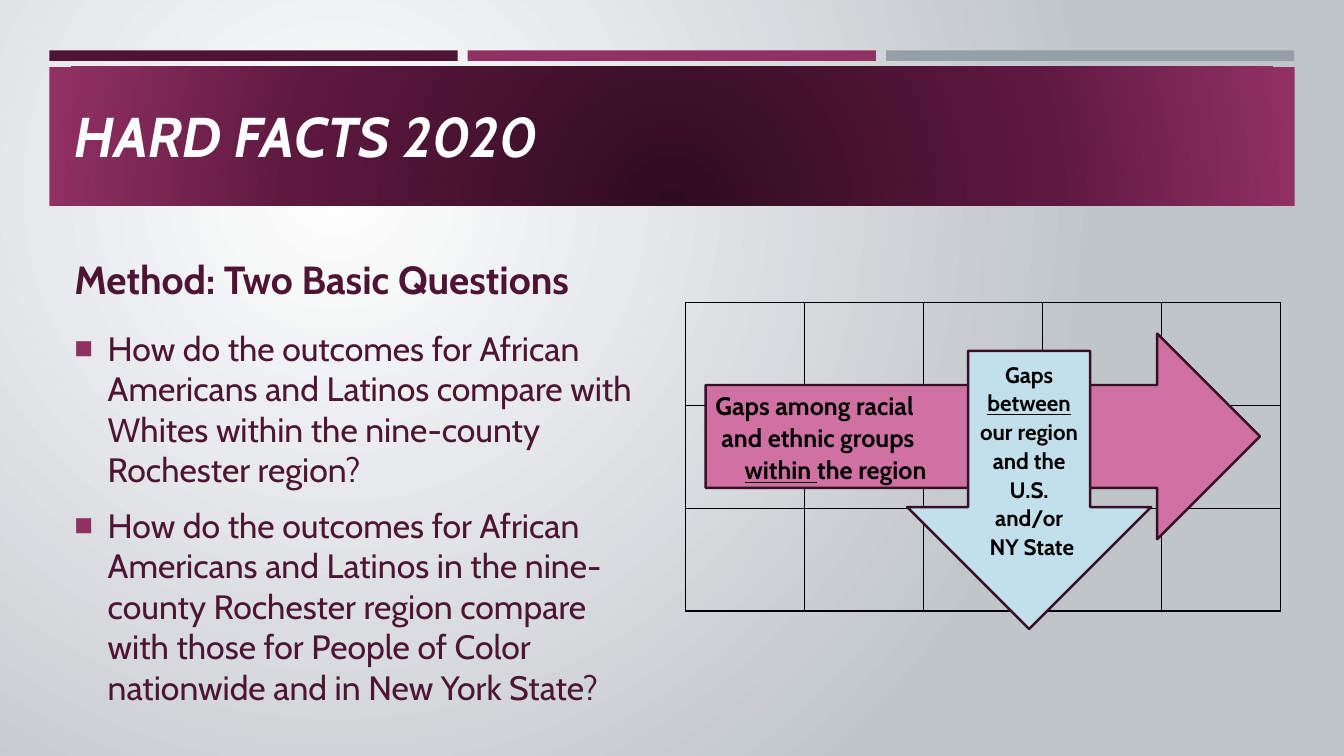
from lxml import etree
from pptx import Presentation
from pptx.dml.color import RGBColor
from pptx.enum.shapes import MSO_SHAPE as Preset
from pptx.enum.text import MSO_ANCHOR as Anchor, PP_ALIGN as Align
from pptx.oxml import parse_xml
from pptx.oxml.ns import nsdecls, qn
from pptx.util import Pt

PLUM = RGBColor(0x4D, 0x14, 0x34)
MAGENTA = RGBColor(0x90, 0x31, 0x63)
SLATE = RGBColor(0x96, 0x9F, 0xA7)
PINK = RGBColor(0xCF, 0x71, 0xA2)
ICE = RGBColor(0xC2, 0xE0, 0xEB)
OUTLINE = RGBColor(0x39, 0x0F, 0x26)
WHITE = RGBColor(0xFF, 0xFF, 0xFF)
BLACK = RGBColor(0, 0, 0)
FONT = "Cabin"

BACKDROP_STOPS = [(0, "FFFFFF"), (100, "C0C5CA")]
BAND_STOPS = [(0, "2E0C1F"), (60, "5D183F"), (100, "903163")]
TITLE = "HARD FACTS 2020"
METHOD = "Method: Two Basic Questions"
QUESTIONS = [
    "How do the outcomes for African Americans and Latinos compare with "
    "Whites within the nine-county Rochester region?",
    "How do the outcomes for African Americans and Latinos in the nine-county "
    "Rochester region compare with those for People of Color nationwide and in "
    "New York State?",
]
WITHIN = [
    (0, [("Gaps among racial", False)]),
    (4.2, [("and ethnic groups", False)]),
    (20.8, [("within ", True), ("the region", False)]),
]
BETWEEN = [
    (0, [("Gaps", False)]),
    (0, [("between", True)]),
    (0, [("our region", False)]),
    (0, [("and the U.S. and/or", False)]),
    (4, [("NY State", False)]),
]
BARS = [PLUM, MAGENTA, SLATE]
BAR_LEFT, BAR_STEP, BAR_WIDTH = 35.3, 298.8, 291.6
GRID_ROWS, GRID_COLUMNS = 3, 5
GRID_BOX = (489.6, 216, 424.8, 220.5)
TEXT_LEFT, TEXT_WIDTH = 46.1, 424.8


def points(box):
    return [Pt(value) for value in box]


def radial(solid, stops, focus):
    stop_xml = "".join(
        f'<a:gs pos="{pos * 1000}"><a:srgbClr val="{color}"/></a:gs>'
        for pos, color in stops)
    edges = " ".join(
        f'{side}="{value * 1000}"' for side, value in zip("ltrb", focus))
    gradient = parse_xml(
        f'<a:gradFill {nsdecls("a")} rotWithShape="1"><a:gsLst>{stop_xml}</a:gsLst>'
        f'<a:path path="circle"><a:fillToRect {edges}/></a:path></a:gradFill>')
    solid.getparent().replace(solid, gradient)


def style(font, size, color, bold=False, italic=False):
    font.name, font.size, font.bold, font.italic = FONT, Pt(size), bold, italic
    font.color.rgb = color


def add_block(preset, box, color):
    block = slide.shapes.add_shape(preset, *points(box))
    block.shadow.inherit = False
    block.fill.solid()
    block.fill.fore_color.rgb = color
    block.line.fill.background()
    return block


def add_words(box, lines, anchor, size, color, bold=False, italic=False):
    frame = slide.shapes.add_textbox(*points(box)).text_frame
    frame.word_wrap = True
    frame.vertical_anchor = anchor
    frame.text = "\n".join(lines)
    for paragraph in frame.paragraphs:
        for run in paragraph.runs:
            style(run.font, size, color, bold, italic)
    return frame


def add_bullet(paragraph):
    properties = paragraph._p.get_or_add_pPr()
    properties.set("marL", str(Pt(23.8)))
    properties.set("indent", str(Pt(-23.8)))
    color = etree.SubElement(properties, qn("a:buClr"))
    etree.SubElement(color, qn("a:srgbClr"), val=str(MAGENTA))
    etree.SubElement(properties, qn("a:buSzPct"), val="92000")
    etree.SubElement(properties, qn("a:buFont"), typeface="Arial")
    etree.SubElement(properties, qn("a:buChar"), char="■")


def add_arrow(preset, box, color, lines, size, align):
    arrow = add_block(preset, box, color)
    arrow.line.color.rgb = OUTLINE
    arrow.line.width = Pt(1.75)
    frame = arrow.text_frame
    frame.word_wrap = True
    frame.vertical_anchor = Anchor.MIDDLE
    for index, (indent, pieces) in enumerate(lines):
        paragraph = frame.add_paragraph() if index else frame.paragraphs[0]
        paragraph.alignment = align
        paragraph.line_spacing = 1.07
        paragraph._p.get_or_add_pPr().set("marL", str(Pt(indent)))
        for words, underlined in pieces:
            run = paragraph.add_run()
            run.text = words
            style(run.font, size, BLACK, bold=True)
            run.font.underline = underlined


def add_grid():
    left, top, width, height = GRID_BOX
    grid = slide.shapes.add_table(
        GRID_ROWS, GRID_COLUMNS, *points(GRID_BOX)).table
    grid.first_row = grid.horz_banding = False
    for column in grid.columns:
        column.width = Pt(width / GRID_COLUMNS)
    for row in grid.rows:
        row.height = Pt(height / GRID_ROWS)
    for cell in grid.iter_cells():
        properties = cell._tc.get_or_add_tcPr()
        for side in ("lnL", "lnR", "lnT", "lnB"):
            properties.append(parse_xml(
                f'<a:{side} {nsdecls("a")} w="{Pt(1)}"><a:solidFill>'
                f'<a:srgbClr val="{BLACK}"/></a:solidFill></a:{side}>'))
        cell.fill.background()


deck = Presentation()
deck.slide_width, deck.slide_height = Pt(960), Pt(540)
slide = deck.slides.add_slide(deck.slide_layouts[6])

slide.background.fill.solid()
radial(slide.element.find(".//" + qn("a:solidFill")),
       BACKDROP_STOPS, (50, 50, 100, 100))

for index, color in enumerate(BARS):
    add_block(Preset.RECTANGLE,
              (BAR_LEFT + index * BAR_STEP, 36, BAR_WIDTH, 7.5), color)
band = add_block(Preset.RECTANGLE, (BAR_LEFT, 47.6, 889.5, 99.5), PLUM)
radial(band._element.spPr.find(qn("a:solidFill")),
       BAND_STOPS, (50, 130, 50, -30))

add_words((TEXT_LEFT, 57.6, 868.3, 77.8), [TITLE], Anchor.MIDDLE,
          40, WHITE, bold=True, italic=True)
method = add_words((TEXT_LEFT, 177.1, TEXT_WIDTH, 42.5), [METHOD],
                   Anchor.BOTTOM, 28, PLUM, bold=True)
method.paragraphs[0].space_after = Pt(6)
questions = add_words((TEXT_LEFT, 230.4, TEXT_WIDTH, 269.3), QUESTIONS,
                      Anchor.TOP, 24.1, PLUM)
for index, paragraph in enumerate(questions.paragraphs):
    add_bullet(paragraph)
    paragraph.space_before = Pt(4.8 if index else 0)
    paragraph.space_after = Pt(6)

add_grid()
add_arrow(Preset.RIGHT_ARROW, (504, 238.3, 396, 146.9), PINK,
          WITHIN, 18, Align.LEFT)
add_arrow(Preset.DOWN_ARROW, (648, 250.6, 174.2, 198.7), ICE,
          BETWEEN, 16, Align.CENTER)

deck.save("out.pptx")
